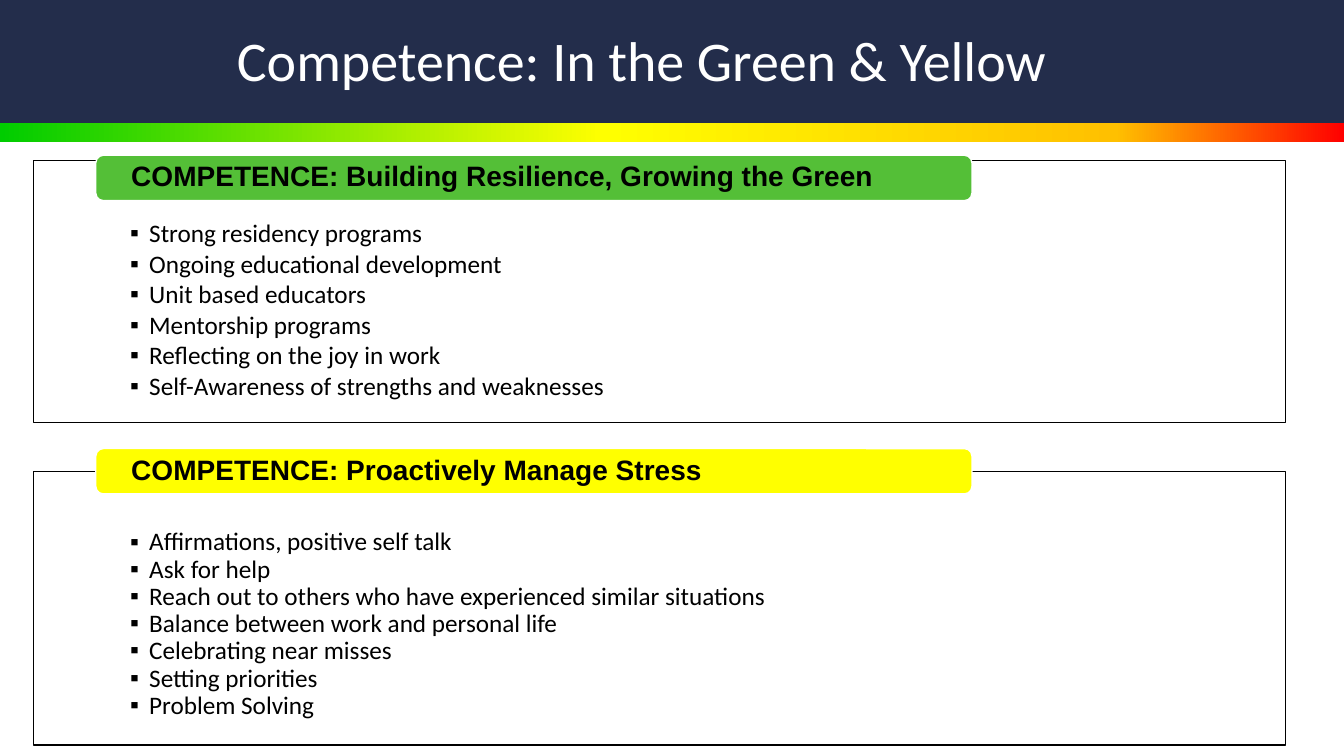
from dataclasses import dataclass
from typing import Any

from lxml.etree import SubElement
from pptx import Presentation
from pptx.dml.color import RGBColor
from pptx.enum.shapes import MSO_SHAPE as SHAPE
from pptx.enum.text import MSO_ANCHOR as ANCHOR, MSO_AUTO_SIZE as AUTO, PP_ALIGN as ALIGN
from pptx.oxml.ns import qn
from pptx.util import Inches, Pt

COLORS = {
    "navy": "232D4B", "white": "FFFFFF", "black": "000000",
    "green": "54BF37", "yellow": "FFFF00",
}
SPECTRUM = {0: "00CC00", 45: "FFFF00", 83: "FFC000", 100: "FF0000"}
WIDTH = 13.33


@dataclass
class Section:
    """A framed list with a coloured heading on its top edge."""

    heading: str
    color: str
    heading_top: float
    top: float
    height: float
    inset: float
    gap: float
    items: list[str]


SECTIONS = [
    Section("COMPETENCE: Building Resilience, Growing the Green", "green",
            1.54, 1.59, 2.6, 0.6, 2.4, [
                "Strong residency programs",
                "Ongoing educational development",
                "Unit based educators",
                "Mentorship programs",
                "Reflecting on the joy in work",
                "Self-Awareness of strengths and weaknesses",
            ]),
    Section("COMPETENCE: Proactively Manage Stress", "yellow",
            4.45, 4.68, 2.71, 0.57, 0, [
                "Affirmations, positive self talk",
                "Ask for help",
                "Reach out to others who have experienced similar situations",
                "Balance between work and personal life",
                "Celebrating near misses",
                "Setting priorities",
                "Problem Solving",
            ]),
]


def rgb(name: str) -> RGBColor:
    """Look up a named colour."""
    return RGBColor.from_string(COLORS[name])


def place(sp: Any, left: float, top: float, width: float, height: float) -> None:
    """Position a shape in inches."""
    sp.left, sp.top = Inches(left), Inches(top)
    sp.width, sp.height = Inches(width), Inches(height)


def paint(sp: Any, fill: str, line: str) -> None:
    """Give a shape a solid fill and a one-point outline."""
    sp.fill.solid()
    sp.fill.fore_color.rgb = rgb(fill)
    sp.line.color.rgb = rgb(line)
    sp.line.width = Pt(1)


def setup_text(sp: Any, side: float, top: float, bottom: float, anchor: ANCHOR) -> Any:
    """Set the text frame's margins and anchor."""
    tf = sp.text_frame
    tf.word_wrap, tf.auto_size, tf.vertical_anchor = True, AUTO.NONE, anchor
    tf.margin_left = tf.margin_right = Inches(side)
    tf.margin_top, tf.margin_bottom = Inches(top), Inches(bottom)
    return tf


def write(p: Any, text: str, size: int, font: str, color: str, bold: bool = False) -> None:
    """Add one formatted run to a left-aligned paragraph."""
    p.alignment, p.line_spacing, p.space_before = ALIGN.LEFT, 0.9, Pt(0)
    r = p.add_run()
    r.text = text
    r.font.size, r.font.name, r.font.bold = Pt(size), font, bold
    r.font.color.rgb = rgb(color)


def add_bullet(p: Any) -> None:
    """Give a paragraph a square bullet with a hanging indent."""
    pPr = p._p.get_or_add_pPr()
    pPr.set("marL", str(Inches(0.19)))
    pPr.set("indent", str(-Inches(0.19)))
    SubElement(pPr, qn("a:buFont"), typeface="Arial")
    SubElement(pPr, qn("a:buChar"), char="▪")


def add_band(s: Any, top: float, height: float) -> Any:
    """Add a full-width band behind the placeholders."""
    sp = s.shapes.add_shape(SHAPE.RECTANGLE, 0, Inches(top), Inches(WIDTH), Inches(height))
    sp.shadow.inherit = False
    sp.line.fill.background()
    s.shapes._spTree.insert(2, sp._element)
    return sp


def add_spectrum(s: Any) -> None:
    """Add the green-to-red gradient strip."""
    sp = add_band(s, 1.22, 0.19)
    sp.fill.gradient()
    sp.fill.gradient_angle = 0
    stops = sp._element.spPr.find(qn("a:gradFill")).find(qn("a:gsLst"))
    stops.clear()
    for pos, color in SPECTRUM.items():
        stop = SubElement(stops, qn("a:gs"), pos=str(pos * 1000))
        SubElement(stop, qn("a:srgbClr"), val=color)


def fill_section(s: Any, body: Any, section: Section) -> None:
    """Fill a body placeholder with the list and add its heading."""
    place(body, 0.33, section.top, 12.42, section.height)
    paint(body, "white", "black")
    tf = setup_text(body, 0.96, section.inset, 0.12, ANCHOR.TOP)
    for i, item in enumerate(section.items):
        p = tf.add_paragraph() if i else tf.paragraphs[0]
        write(p, item, 18, "Calibri", "black")
        p.space_after = Pt(section.gap)
        add_bullet(p)

    sp = s.shapes.add_shape(SHAPE.ROUNDED_RECTANGLE, 0, 0, 0, 0)
    place(sp, 0.95, section.heading_top, 8.69, 0.45)
    sp.shadow.inherit = False
    paint(sp, section.color, "white")
    tf = setup_text(sp, 0.33, 0, 0, ANCHOR.MIDDLE)
    write(tf.paragraphs[0], section.heading, 20, "Arial", "black", True)


def main() -> None:
    """Build and save the slide."""
    prs = Presentation()
    prs.slide_width, prs.slide_height = Inches(WIDTH), Inches(7.5)
    s = prs.slides.add_slide(prs.slide_layouts[3])
    title, *bodies = s.placeholders

    banner = add_band(s, 0, 1.22)
    banner.fill.solid()
    banner.fill.fore_color.rgb = rgb("navy")
    add_spectrum(s)

    place(title, 2.25, 0.08, 10.17, 1.1)
    tf = setup_text(title, 0.1, 0.05, 0.05, ANCHOR.MIDDLE)
    write(tf.paragraphs[0], "Competence: In the Green & Yellow", 40, "Calibri", "white")

    for body, section in zip(bodies, SECTIONS):
        fill_section(s, body, section)
    prs.save("out.pptx")


if __name__ == "__main__":
    main()
